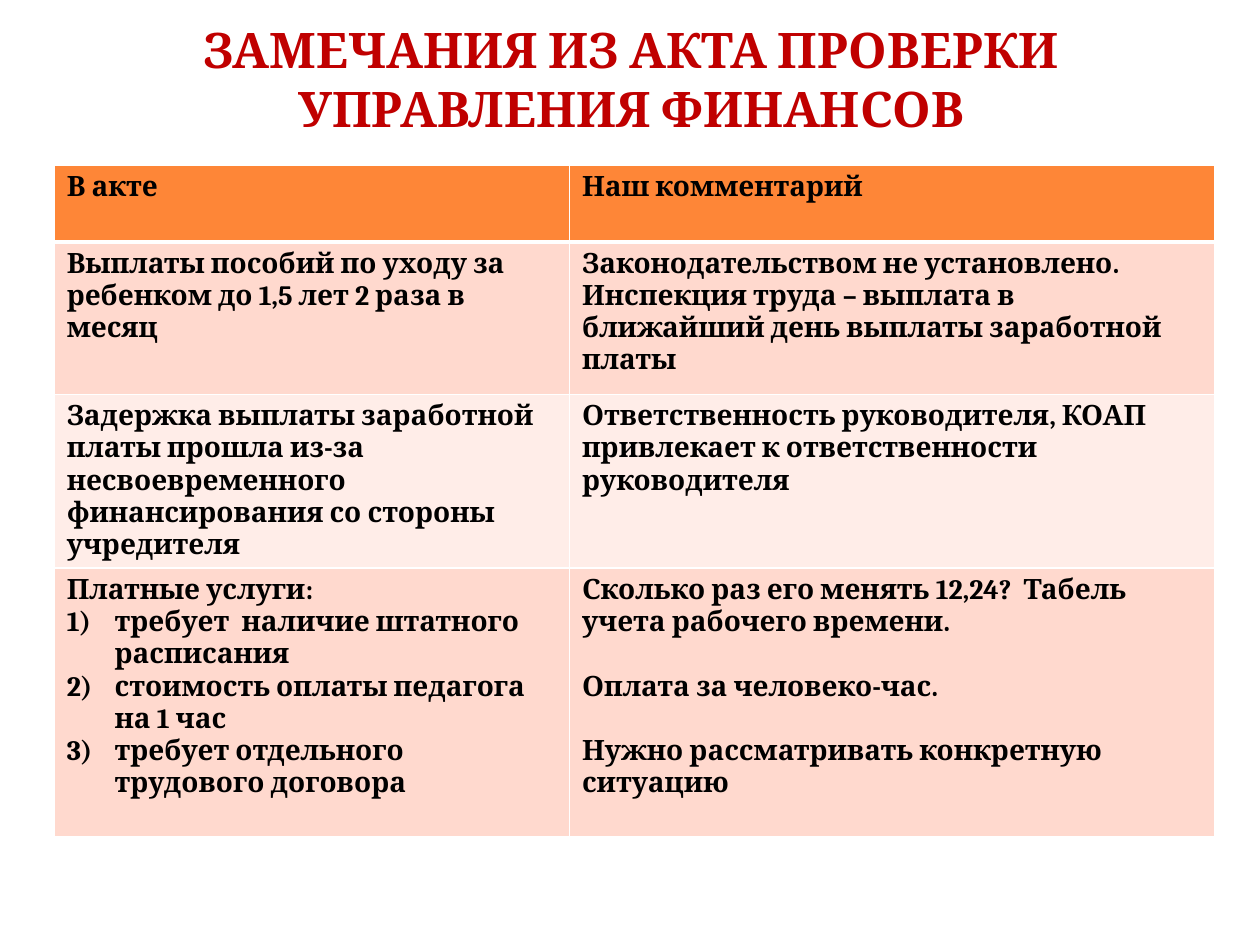
from lxml import etree
from pptx import Presentation
from pptx.dml.color import RGBColor
from pptx.enum.text import MSO_ANCHOR, PP_ALIGN
from pptx.oxml.ns import qn
from pptx.util import Inches, Pt

RED = RGBColor(0xC0, 0x00, 0x00)
BLACK = RGBColor(0x00, 0x00, 0x00)
ORANGE = RGBColor(0xFE, 0x86, 0x37)
PEACH = RGBColor(0xFF, 0xD9, 0xCE)
PALE = RGBColor(0xFF, 0xED, 0xE8)
FONT = "Cambria"

COL_WIDTHS = [4.09, 5.12]
ROW_HEIGHTS = [0.61, 1.21, 1.38, 2.13]
ROW_FILLS = [ORANGE, PEACH, PALE, PEACH]
ROWS = [
    (["В акте"], ["Наш комментарий"]),
    (["Выплаты пособий по уходу за ребенком до 1,5 лет 2 раза в месяц"],
     ["Законодательством не установлено. Инспекция труда – выплата в "
      "ближайший день выплаты заработной платы"]),
    (["Задержка выплаты заработной платы прошла из-за несвоевременного "
      "финансирования со стороны учредителя"],
     ["Ответственность руководителя, КОАП привлекает к ответственности "
      "руководителя"]),
    (["Платные услуги:",
      "требует  наличие штатного расписания",
      "стоимость оплаты педагога на 1 час",
      "требует отдельного трудового договора"],
     ["Сколько раз его менять 12,24?  Табель учета рабочего времени.",
      "Оплата за человеко-час.",
      "Нужно рассматривать конкретную ситуацию"]),
]


def style_run(r, size, color):
    r.font.name = FONT
    r.font.size = Pt(size)
    r.font.bold = True
    r.font.color.rgb = color


def add_border(cell, side, width):
    ln = etree.SubElement(cell._tc.get_or_add_tcPr(), qn(f"a:{side}"), w=str(Pt(width)))
    fill = etree.SubElement(ln, qn("a:solidFill"))
    etree.SubElement(fill, qn("a:srgbClr"), val="FFFFFF")


prs = Presentation()
prs.slide_width = Inches(10)
prs.slide_height = Inches(7.5)
s = prs.slides.add_slide(prs.slide_layouts[6])

# Comparison table
table = s.shapes.add_table(
    len(ROWS), len(COL_WIDTHS), Inches(0.43), Inches(1.31),
    Inches(sum(COL_WIDTHS)), Inches(sum(ROW_HEIGHTS))).table
for column, width in zip(table.columns, COL_WIDTHS):
    column.width = Inches(width)
for row, height in zip(table.rows, ROW_HEIGHTS):
    row.height = Inches(height)

for i, texts in enumerate(ROWS):
    for j, paragraphs in enumerate(texts):
        cell = table.cell(i, j)
        for side in ("lnL", "lnR", "lnT", "lnB"):
            header_edge = (i, side) in ((0, "lnB"), (1, "lnT"))
            add_border(cell, side, 3 if header_edge else 1)
        cell.fill.solid()
        cell.fill.fore_color.rgb = ROW_FILLS[i]

        tf = cell.text_frame
        for k, text in enumerate(paragraphs):
            p = tf.add_paragraph() if k else tf.paragraphs[0]
            p.text = text
            style_run(p.runs[0], 16, BLACK)
            if k and j == 0:
                # Numbered list under the first line
                pPr = p._p.get_or_add_pPr()
                pPr.set("marL", str(Inches(0.38)))
                pPr.set("indent", str(Inches(-0.38)))
                etree.SubElement(pPr, qn("a:buFont"), typeface=FONT)
                etree.SubElement(pPr, qn("a:buAutoNum"), type="arabicParenR")
            elif k:
                # One line of space between comments
                p.space_before = Pt(18.4)

# Title
sp = s.shapes.add_textbox(Inches(0.51), Inches(0), Inches(9), Inches(1.25))
tf = sp.text_frame
tf.word_wrap = True
tf.vertical_anchor = MSO_ANCHOR.MIDDLE
tf.text = "ЗАМЕЧАНИЯ ИЗ АКТА ПРОВЕРКИ УПРАВЛЕНИЯ ФИНАНСОВ"
p = tf.paragraphs[0]
p.alignment = PP_ALIGN.CENTER
style_run(p.runs[0], 28, RED)

prs.save("out.pptx")
